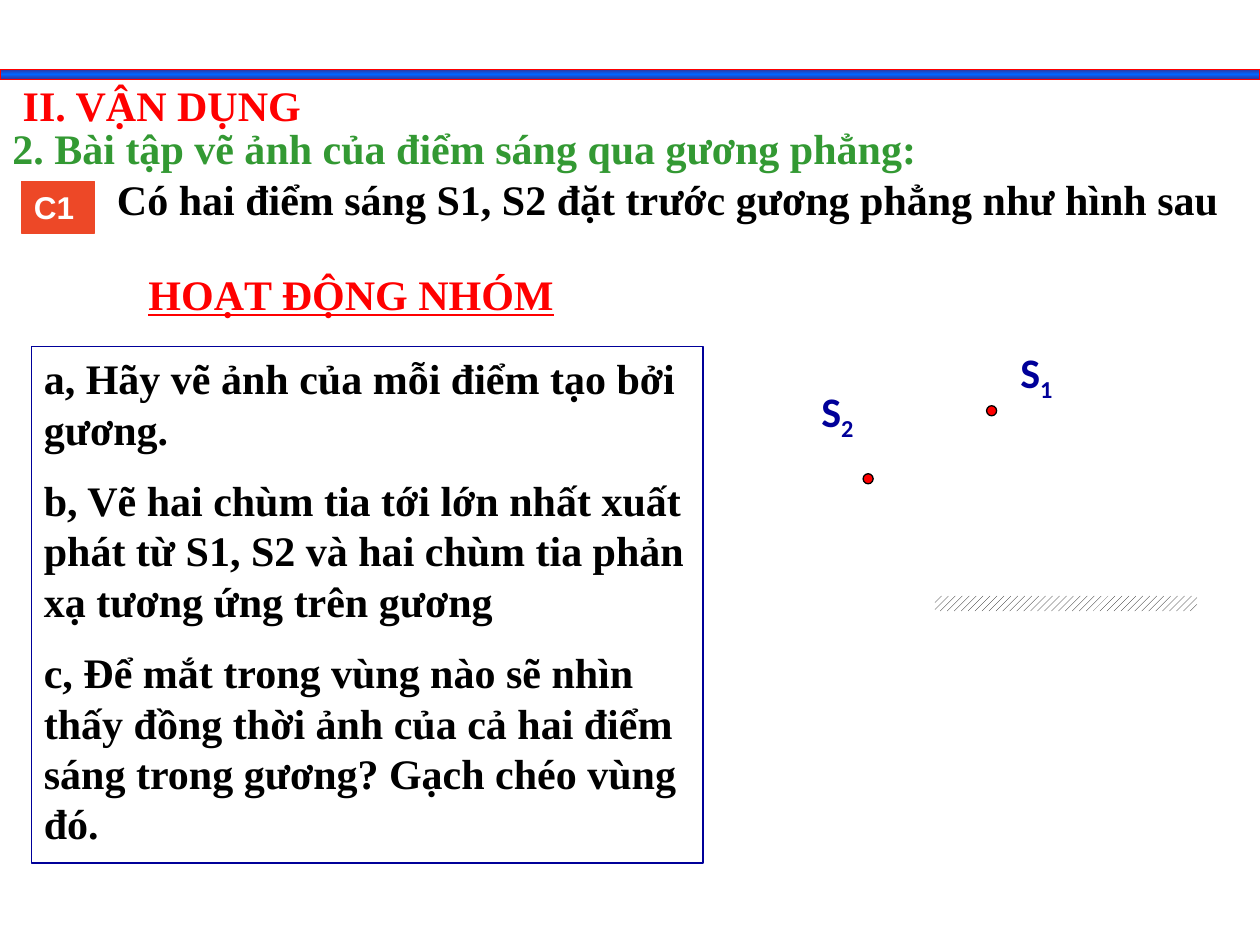
import copy

import pptx
import pptx.dml.color
import pptx.enum.dml
import pptx.enum.shapes
import pptx.enum.text
import pptx.util

Inches = pptx.util.Inches
Pt = pptx.util.Pt
SHAPES = pptx.enum.shapes.MSO_SHAPE

COLORS = {
    "red": "FF0000",
    "green": "339933",
    "black": "000000",
    "white": "FFFFFF",
    "navy": "000099",
    "badge": "ED4827",
    "bar_edge": "333399",
    "bar_middle": "0066FF",
}


def rgb(name):
    return pptx.dml.color.RGBColor.from_string(COLORS[name])


def write_text(shape, paragraphs, size=24, font="Times New Roman", color="black",
               underline=False, subscript=None):
    frame = shape.text_frame
    frame.word_wrap = True
    frame.auto_size = pptx.enum.text.MSO_AUTO_SIZE.SHAPE_TO_FIT_TEXT
    frame.vertical_anchor = pptx.enum.text.MSO_ANCHOR.TOP
    for index, text in enumerate(paragraphs):
        paragraph = frame.add_paragraph() if index else frame.paragraphs[0]
        paragraph.alignment = pptx.enum.text.PP_ALIGN.LEFT
        paragraph.space_before = Pt(12 if index else 0)
        for part in filter(None, (text, subscript)):
            run = paragraph.add_run()
            run.text = part
            run.font.name = font
            run.font.size = Pt(size)
            run.font.bold = True
            run.font.underline = underline
            run.font.color.rgb = rgb(color)
        if subscript:
            run.font._element.set("baseline", "-25000")


def add_text(slide, box, text, **text_format):
    shape = slide.shapes.add_textbox(*map(Inches, box))
    write_text(shape, [text], **text_format)


def add_shape(slide, kind, box, fill=None, line=None):
    shape = slide.shapes.add_shape(kind, *map(Inches, box))
    shape.shadow.inherit = False
    if fill:
        shape.fill.solid()
        shape.fill.fore_color.rgb = rgb(fill)
    else:
        shape.fill.background()
    if line:
        shape.line.color.rgb = rgb(line)
        shape.line.width = Pt(0.75)
    else:
        shape.line.fill.background()
    return shape


def add_header_bar(slide, box):
    bar = add_shape(slide, SHAPES.RECTANGLE, box, line="red")
    bar.fill.gradient()
    bar.fill.gradient_angle = 90
    stop_list = bar._element.xpath(".//a:gsLst")[0]
    stop_list.append(copy.deepcopy(stop_list[0]))
    names = ("bar_edge", "bar_middle", "bar_edge")
    for stop, position, name in zip(bar.fill.gradient_stops, (0, 0.5, 1), names):
        stop.position = position
        stop.color.rgb = rgb(name)


def add_headings(slide, left, top):
    title = slide.shapes.title
    title.left, title.top = Inches(left + 0.08), Inches(top)
    title.width, title.height = Inches(3.33), Inches(0.5)
    write_text(title, ["II. VẬN DỤNG"], color="red")
    add_text(slide, (left, top + 0.34, 9.58, 0.5),
             "2. Bài tập vẽ ảnh của điểm sáng qua gương phẳng:", color="green")


def add_exercise(slide, left, top):
    badge = add_shape(slide, SHAPES.RECTANGLE, (left, top + 0.11, 0.58, 0.41),
                      fill="badge", line="badge")
    write_text(badge, ["C1"], size=18, font="Arial", color="white")
    add_text(slide, (left + 0.66, top, 9.17, 0.5),
             "Có hai điểm sáng S1, S2 đặt trước gương phẳng như hình sau")


def add_tasks(slide, box):
    left, top = box[:2]
    add_text(slide, (left + 0.83, top - 0.67, 3.75, 0.5), "HOẠT ĐỘNG NHÓM",
             color="red", underline=True)
    panel = add_shape(slide, SHAPES.RECTANGLE, box, line="navy")
    write_text(panel, [
        "a, Hãy vẽ ảnh của mỗi điểm tạo bởi gương.",
        "b, Vẽ hai chùm tia tới lớn nhất xuất phát từ S1, S2 và hai chùm tia phản xạ "
        "tương ứng trên gương",
        "c, Để mắt trong vùng nào sẽ nhìn thấy đồng thời ảnh của cả hai điểm sáng "
        "trong gương? Gạch chéo vùng đó.",
    ])


def add_mirror_diagram(slide, left, top):
    light_points = (
        ("1", (1.41, 0.52), (1.58, 0)),
        ("2", (0.43, 1.06), (0, 0.31)),
    )
    for number, (dot_x, dot_y), (label_x, label_y) in light_points:
        add_shape(slide, SHAPES.FLOWCHART_CONNECTOR,
                  (left + dot_x, top + dot_y, 0.08, 0.08), fill="red", line="black")
        add_text(slide, (left + label_x, top + label_y, 0.67, 0.5), "S",
                 font="Calibri", color="navy", subscript=number)
    mirror = add_shape(slide, SHAPES.RECTANGLE, (left + 1, top + 2.03, 2.08, 0.12))
    mirror.fill.patterned()
    mirror.fill.pattern = pptx.enum.dml.MSO_PATTERN.WIDE_UPWARD_DIAGONAL
    mirror.fill.fore_color.rgb = rgb("black")
    mirror.fill.back_color.rgb = rgb("white")


def main():
    presentation = pptx.Presentation()
    presentation.slide_width = Inches(10)
    presentation.slide_height = Inches(7.5)
    slide = presentation.slides.add_slide(presentation.slide_layouts[5])
    add_header_bar(slide, (0, 0.55, 10, 0.08))
    add_headings(slide, 0, 0.58)
    add_exercise(slide, 0.17, 1.33)
    add_tasks(slide, (0.25, 2.75, 5.33, 4.1))
    add_mirror_diagram(slide, 6.42, 2.7)
    presentation.save("out.pptx")


if __name__ == "__main__":
    main()
